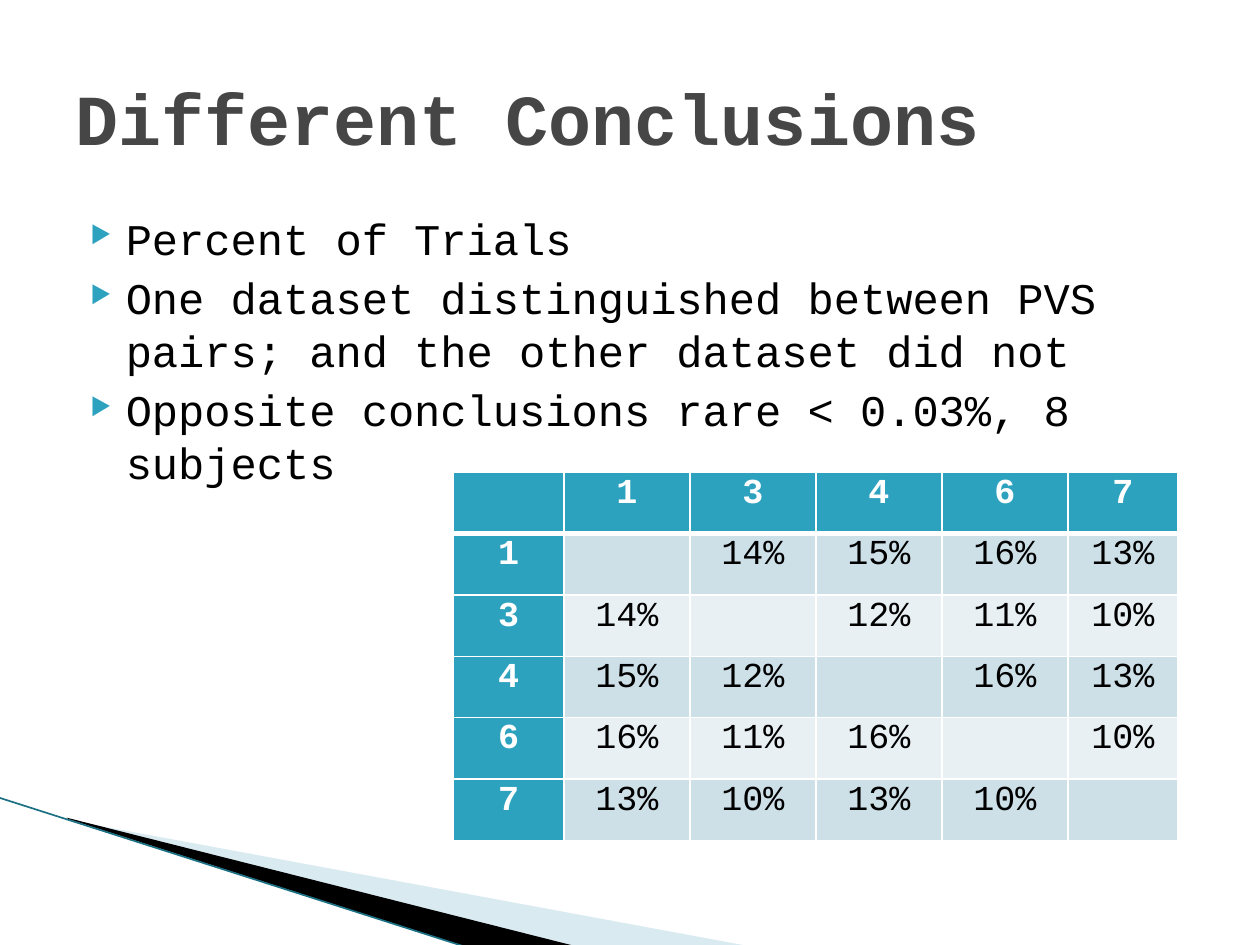
from lxml import etree
from pptx import Presentation
from pptx import util as u
from pptx.dml.color import RGBColor
from pptx.enum import shapes, text
from pptx.oxml import ns

FONT = "Courier New"
COLORS = {
    "teal": "2DA2BF", "band_dark": "CDE0E8", "band_light": "E8F0F4",
    "title": "464646", "black": "000000", "white": "FFFFFF",
    "wedge": "A0CBDC", "edge": "1B7083",
}
TITLE = "Different Conclusions"
BULLETS = [
    "Percent of Trials",
    "One dataset distinguished between PVS pairs; and the other dataset did not",
    "Opposite conclusions rare < 0.03%, 8 subjects",
]
TRIALS = [
    ["", "1", "3", "4", "6", "7"],
    ["1", "", "14%", "15%", "16%", "13%"],
    ["3", "14%", "", "12%", "11%", "10%"],
    ["4", "15%", "12%", "", "16%", "13%"],
    ["6", "16%", "11%", "16%", "", "10%"],
    ["7", "13%", "10%", "13%", "10%", ""],
]
TABLE_WIDTH, TABLE_HEIGHT = 5.75, 2.92
INNER_COLUMNS = [1, 1, 1, 1]
OUTER_COLUMN = (TABLE_WIDTH - sum(INNER_COLUMNS)) / 2
COLUMNS = [OUTER_COLUMN, *INNER_COLUMNS, OUTER_COLUMN]
ROW_HEIGHT = TABLE_HEIGHT / len(TRIALS)
UNITS_PER_INCH = 100
WEDGES = [
    ("wedge", 40, [(55, 651), (595, 751), (456, 751), (55, 650)]),
    ("black", 100, [(53, 649), (457, 751), (372, 752), (54, 650)]),
]


def rgb(name):
    return RGBColor.from_string(COLORS[name])


def add(parent, tag, **attrs):
    return etree.SubElement(parent, ns.qn(tag), attrs)


def style(p, size, color, bold=False):
    p.font.name, p.font.size, p.font.bold = FONT, u.Pt(size), bold
    p.font.color.rgb = rgb(color)


def add_wedge(s, color, opacity, points):
    builder = s.shapes.build_freeform(
        *points[0], scale=u.Inches(1) / UNITS_PER_INCH)
    builder.add_line_segments(points[1:], close=True)
    sp = builder.convert_to_shape()
    sp.shadow.inherit = False
    sp.fill.solid()
    sp.fill.fore_color.rgb = rgb(color)
    sp.line.fill.background()
    if opacity < 100:
        fill = sp._element.spPr.find(ns.qn("a:solidFill"))
        add(fill[0], "a:alpha", val=str(opacity * 1000))


def add_edge(s):
    line = s.shapes.add_connector(
        shapes.MSO_CONNECTOR.STRAIGHT,
        *map(u.Inches, (-0.01, 6.33, 3.71, 7.52)))
    line.line.color.rgb = rgb("edge")
    line.line.width = u.Pt(0.95)
    add(line._element.spPr, "a:effectLst")


def add_text(s, left, top, width, height):
    box = s.shapes.add_textbox(*map(u.Inches, (left, top, width, height)))
    box.text_frame.word_wrap = True
    return box.text_frame


def add_bullets(s):
    tf = add_text(s, 0.5, 1.63, 8.74, 2.05)
    for i, words in enumerate(BULLETS):
        p = tf.paragraphs[0] if i == 0 else tf.add_paragraph()
        p.text = words
        p.space_before = u.Pt(4 if i else 0)
        props = p._p.get_or_add_pPr()
        props.set("marL", str(u.Inches(0.4)))
        props.set("indent", str(u.Inches(-0.28)))
        add(add(props, "a:buClr"), "a:srgbClr", val=COLORS["teal"])
        add(props, "a:buSzPct", val="55000")
        add(props, "a:buChar", char="▶")
        style(p, 25, "black")


def add_borders(cell, row):
    props = cell._tc.get_or_add_tcPr()
    thick = {"a:lnT": row == 1, "a:lnB": row == 0}
    for i, side in enumerate(("a:lnL", "a:lnR", "a:lnT", "a:lnB")):
        width = u.Pt(3 if thick.get(side) else 1)
        ln = etree.Element(ns.qn(side), w=str(width))
        add(add(ln, "a:solidFill"), "a:srgbClr", val=COLORS["white"])
        props.insert(i, ln)


def add_trials(s):
    table = s.shapes.add_table(
        len(TRIALS), len(COLUMNS), u.Inches(3.6), u.Inches(3.75),
        u.Inches(TABLE_WIDTH), u.Inches(TABLE_HEIGHT)).table
    for column, width in zip(table.columns, COLUMNS):
        column.width = u.Inches(width)
    for r, values in enumerate(TRIALS):
        table.rows[r].height = u.Inches(ROW_HEIGHT)
        for c, value in enumerate(values):
            cell = table.cell(r, c)
            header = r == 0 or c == 0
            band = "band_dark" if r % 2 else "band_light"
            cell.fill.solid()
            cell.fill.fore_color.rgb = rgb("teal" if header else band)
            cell.margin_left = cell.margin_right = u.Inches(0.07)
            cell.margin_top = cell.margin_bottom = 0
            add_borders(cell, r)
            p = cell.text_frame.paragraphs[0]
            p.text = value
            p.alignment = text.PP_ALIGN.CENTER
            p.line_spacing = 1.05
            style(p, 20, "white" if header else "black", header)


def main():
    prs = Presentation()
    prs.slide_width, prs.slide_height = u.Inches(10), u.Inches(7.5)
    s = prs.slides.add_slide(prs.slide_layouts[6])
    for wedge in WEDGES:
        add_wedge(s, *wedge)
    add_edge(s)
    add_trials(s)
    tf = add_text(s, 0.5, 0.3, 9, 1.25)
    tf.vertical_anchor = text.MSO_ANCHOR.MIDDLE
    p = tf.paragraphs[0]
    p.text = TITLE
    style(p, 41, "title", True)
    add_bullets(s)
    prs.save("out.pptx")


if __name__ == "__main__":
    main()
